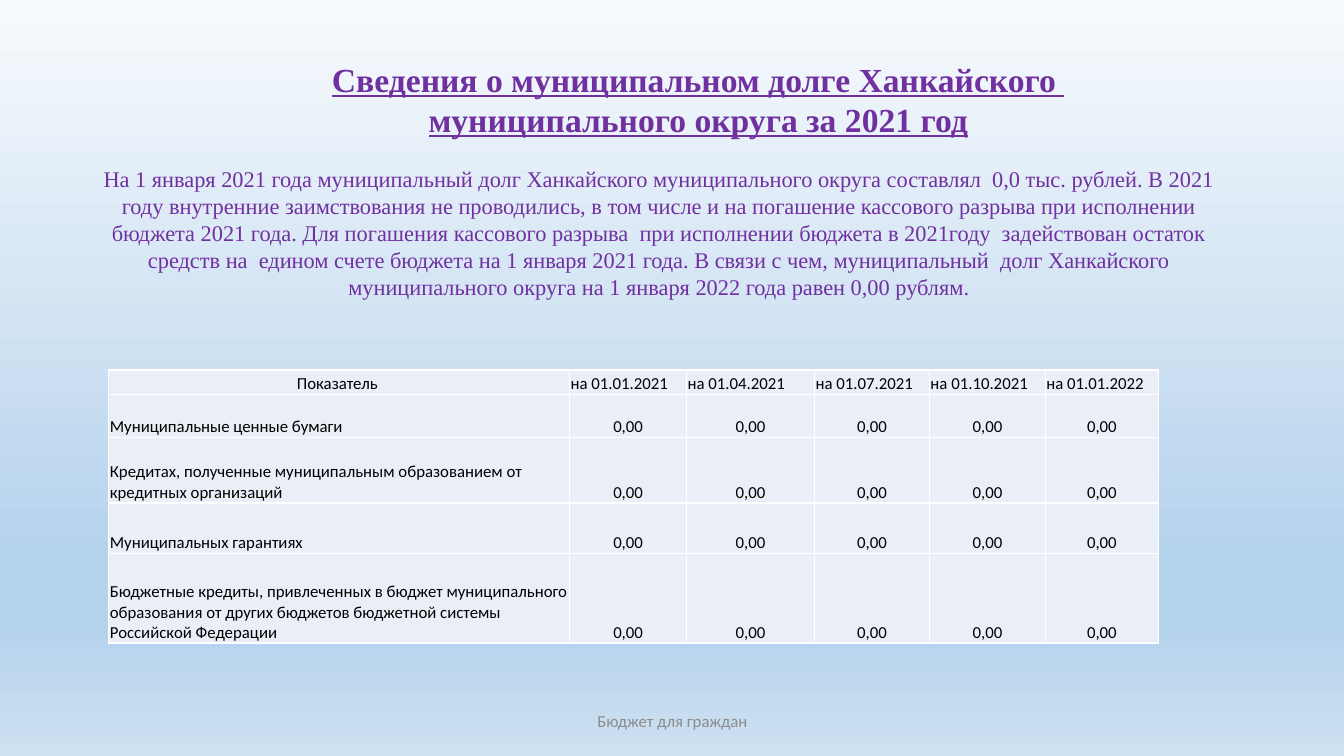
from pptx import Presentation
from pptx.dml.color import RGBColor
from pptx.enum.text import MSO_ANCHOR, MSO_AUTO_SIZE, PP_ALIGN
from pptx.oxml.ns import qn
from pptx.util import Inches, Pt
from lxml.etree import SubElement

PURPLE = RGBColor(0x70, 0x30, 0xA0)
BLACK = RGBColor(0, 0, 0)
GREY = RGBColor(0x8C, 0x8C, 0x8C)
WHITE = RGBColor(0xFF, 0xFF, 0xFF)
CELL_BLUE = RGBColor(0xEA, 0xEF, 0xF7)
SKY_TOP = RGBColor(0xF7, 0xFA, 0xFD)
SKY_MIDDLE = RGBColor(0xB5, 0xD2, 0xEC)
SKY_BOTTOM = RGBColor(0xCE, 0xE1, 0xF2)
SERIF = "Times New Roman"
SANS = "Calibri"

TITLE = ["Сведения о муниципальном долге Ханкайского ", "муниципального округа за 2021 год"]
SUMMARY = (
    "На 1 января 2021 года муниципальный долг Ханкайского муниципального округа составлял  0,0 тыс. рублей. "
    "В 2021 году внутренние заимствования не проводились, в том числе и на погашение кассового разрыва при "
    "исполнении бюджета 2021 года. Для погашения кассового разрыва  при исполнении бюджета в 2021году  "
    "задействован остаток средств на  едином счете бюджета на 1 января 2021 года. В связи с чем, "
    "муниципальный  долг Ханкайского муниципального округа на 1 января 2022 года равен 0,00 рублям."
)
DATES = ["01.01.2021", "01.04.2021", "01.07.2021", "01.10.2021", "01.01.2022"]
INDICATORS = [
    "Муниципальные ценные бумаги",
    "Кредитах, полученные муниципальным образованием от кредитных организаций",
    "Муниципальных гарантиях",
    "Бюджетные кредиты, привлеченных в бюджет муниципального образования от других бюджетов "
    "бюджетной системы Российской Федерации",
]
COLUMN_WIDTHS = [4.57, 1.16, 1.27, 1.14, 1.15, 1.12]
ROW_HEIGHTS = [0.24, 0.43, 0.65, 0.5, 0.89]


def write_text(text_frame, lines, size=12, font=SANS, color=BLACK, bold=False, underline=False,
               align=PP_ALIGN.CENTER):
    """Write each line as one formatted paragraph."""
    for index, line in enumerate(lines):
        paragraph = text_frame.add_paragraph() if index else text_frame.paragraphs[0]
        paragraph.alignment = align
        run = paragraph.add_run()
        run.text = line
        run.font.size = Pt(size)
        run.font.name = font
        run.font.color.rgb = color
        run.font.bold = bold
        run.font.underline = underline


class DebtSlide:
    """Hold the current slide and add elements in its style."""

    def __init__(self, presentation):
        """Add a title-only slide."""
        self.slide = presentation.slides.add_slide(presentation.slide_layouts[5])

    def background(self, stops):
        """Fill the background with a vertical gradient."""
        fill = self.slide.background.fill
        fill.gradient()
        fill.gradient_angle = 270
        stop_list = next(self.slide.element.iter(qn("a:gsLst")))
        for stop in list(stop_list):
            stop_list.remove(stop)
        for percent, color in stops:
            stop = SubElement(stop_list, qn("a:gs"), pos=str(percent * 1000))
            SubElement(stop, qn("a:srgbClr"), val=str(color))

    def title(self, lines, left, top, width, height, **text_format):
        """Place and format the title placeholder."""
        shape = self.slide.shapes.title
        shape.left, shape.top = Inches(left), Inches(top)
        shape.width, shape.height = Inches(width), Inches(height)
        text_frame = shape.text_frame
        text_frame.auto_size = MSO_AUTO_SIZE.NONE
        text_frame.word_wrap = False
        text_frame.vertical_anchor = MSO_ANCHOR.TOP
        write_text(text_frame, lines, **text_format)

    def text(self, content, left, top, width, height, anchor=MSO_ANCHOR.TOP, **text_format):
        """Add a wrapping text box."""
        shape = self.slide.shapes.add_textbox(Inches(left), Inches(top), Inches(width), Inches(height))
        shape.text_frame.word_wrap = True
        shape.text_frame.vertical_anchor = anchor
        write_text(shape.text_frame, [content], **text_format)

    def table(self, rows, left, top, widths, heights):
        """Add a table with indicators in the first column."""
        frame = self.slide.shapes.add_table(len(rows), len(widths), Inches(left), Inches(top),
                                            Inches(sum(widths)), Inches(sum(heights)))
        table = frame.table
        table.first_row = table.horz_banding = False
        for column, width in zip(table.columns, widths):
            column.width = Inches(width)
        for row, height in zip(table.rows, heights):
            row.height = Inches(height)
        for row_index, row in enumerate(rows):
            for column_index, content in enumerate(row):
                centred = (row_index == 0) == (column_index == 0)
                self.cell(table.cell(row_index, column_index), content,
                          PP_ALIGN.CENTER if centred else PP_ALIGN.LEFT)

    def cell(self, cell, content, align):
        """Format one table cell with white borders."""
        cell.margin_left = cell.margin_right = cell.margin_top = Inches(0.01)
        cell.margin_bottom = 0
        cell.vertical_anchor = MSO_ANCHOR.BOTTOM
        write_text(cell.text_frame, [content], align=align)
        properties = cell._tc.get_or_add_tcPr()
        for side in ("lnL", "lnR", "lnT", "lnB"):
            line = SubElement(properties, qn(f"a:{side}"), w=str(Pt(1)))
            SubElement(SubElement(line, qn("a:solidFill")), qn("a:srgbClr"), val=str(WHITE))
        cell.fill.solid()
        cell.fill.fore_color.rgb = CELL_BLUE


def main():
    """Build and save the municipal debt slide."""
    presentation = Presentation()
    presentation.slide_width, presentation.slide_height = Inches(13.33), Inches(7.5)
    debt = DebtSlide(presentation)
    debt.background([(0, SKY_TOP), (74, SKY_MIDDLE), (83, SKY_MIDDLE), (100, SKY_BOTTOM)])
    debt.title(TITLE, 3.15, 0.53, 7.55, 0.91, size=24, font=SERIF, color=PURPLE, bold=True, underline=True)
    debt.text(SUMMARY, 0.79, 1.59, 11.49, 1.45, size=16, font=SERIF, color=PURPLE)
    header = ["Показатель "] + [f"на {date}" for date in DATES]
    rows = [header] + [[indicator] + ["0,00"] * len(DATES) for indicator in INDICATORS]
    debt.table(rows, 1.08, 3.67, COLUMN_WIDTHS, ROW_HEIGHTS)
    debt.text("Бюджет для граждан", 4.42, 6.95, 4.5, 0.4, anchor=MSO_ANCHOR.MIDDLE, color=GREY)
    presentation.save("out.pptx")


if __name__ == "__main__":
    main()
